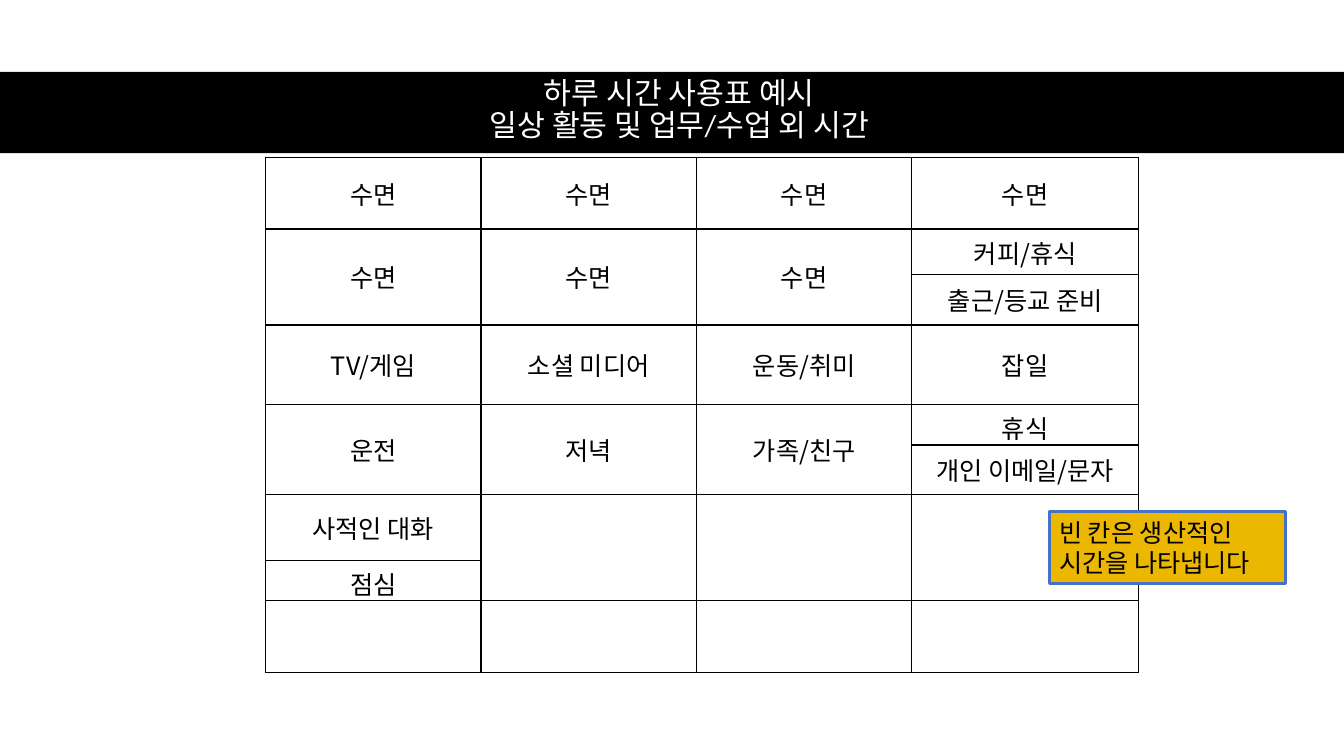
from lxml import etree
from pptx import Presentation
from pptx.dml.color import RGBColor
from pptx.enum.shapes import MSO_SHAPE
from pptx.enum.text import MSO_ANCHOR, MSO_AUTO_SIZE, PP_ALIGN
from pptx.oxml.ns import qn
from pptx.util import Cm, Pt

COLORS = {"black": "000000", "white": "FFFFFF", "gold": "EBB700", "blue": "4472C4"}
KOREAN = "Noto Sans CJK KR"


def add_run(p, text, size, color, font=KOREAN):
    r = p.add_run()
    r.text = text
    r.font.size = Pt(size)
    r.font.name = font
    r.font.color.rgb = RGBColor.from_string(COLORS[color])
    etree.SubElement(r.font._element, qn("a:ea"), typeface=KOREAN)


def add_box(s, left, top, width, height, fill):
    sp = s.shapes.add_shape(MSO_SHAPE.RECTANGLE, Cm(left), Cm(top), Cm(width), Cm(height))
    sp.shadow.inherit = False
    sp.fill.solid()
    sp.fill.fore_color.rgb = RGBColor.from_string(COLORS[fill])
    return sp


prs = Presentation()
prs.slide_width, prs.slide_height = Cm(33.87), Cm(19.05)
s = prs.slides.add_slide(prs.slide_layouts[6])

# Title band
band = add_box(s, 0, 1.81, 33.87, 2.05, "black")
band.line.fill.background()

# Title
title = s.shapes.add_textbox(Cm(1.55), Cm(1.77), Cm(31.14), Cm(2.05))
tf = title.text_frame
tf.word_wrap = True
tf.vertical_anchor = MSO_ANCHOR.MIDDLE
p = tf.paragraphs[0]
p.alignment = PP_ALIGN.CENTER
p.line_spacing = 0.9
add_run(p, "하루 시간 사용표 예시", 21.6, "white", "Calibri")
p.add_line_break()
add_run(p, "일상 활동 및 업무/수업 외 시간", 21.6, "white", "Calibri")

# Timetable: row height and cell texts
rows = [
    (1.81, ["수면", "수면", "수면", "수면"]),
    (1.15, ["수면", "수면", "수면", "커피/휴식"]),
    (1.27, ["", "", "", "출근/등교 준비"]),
    (2.01, ["TV/게임", "소셜 미디어", "운동/취미", "잡일"]),
    (0.94, ["운전", "저녁", "가족/친구", "휴식"]),
    (1.25, ["", "", "", "개인 이메일/문자"]),
    (1.65, ["사적인 대화", "", "", ""]),
    (0.94, ["점심", "", "", ""]),
    (1.81, ["", "", "", ""]),
]
col_widths = [5.43, 5.43, 5.43, 5.71]
frame = s.shapes.add_table(len(rows), len(col_widths), Cm(6.69), Cm(3.96),
                           Cm(sum(col_widths)), Cm(sum(h for h, _ in rows)))
table = frame.table
table.first_row = table.horz_banding = False
for column, width in zip(table.columns, col_widths):
    column.width = Cm(width)

for i, (height, texts) in enumerate(rows):
    table.rows[i].height = Cm(height)
    for j, text in enumerate(texts):
        cell = table.cell(i, j)
        cell.vertical_anchor = MSO_ANCHOR.MIDDLE
        tcPr = cell._tc.get_or_add_tcPr()
        for side in ("lnL", "lnR", "lnT", "lnB"):
            ln = etree.SubElement(tcPr, qn(f"a:{side}"), w=str(Pt(1)))
            fill = etree.SubElement(ln, qn("a:solidFill"))
            etree.SubElement(fill, qn("a:srgbClr"), val=COLORS["black"])
        cell.fill.background()
        p = cell.text_frame.paragraphs[0]
        p.alignment = PP_ALIGN.CENTER
        if text:
            add_run(p, text, 18, "black")

# Two-row cells: first row and the columns merged
for top, columns in ((1, (0, 1, 2)), (4, (0, 1, 2)), (6, (1, 2, 3))):
    for j in columns:
        table.cell(top, j).merge(table.cell(top + 1, j))

# Callout on the empty cells
note = add_box(s, 26.44, 12.9, 5.95, 1.8, "gold")
note.line.color.rgb = RGBColor.from_string(COLORS["blue"])
note.line.width = Pt(2.25)
tf = note.text_frame
tf.word_wrap = True
tf.auto_size = MSO_AUTO_SIZE.SHAPE_TO_FIT_TEXT
tf.vertical_anchor = MSO_ANCHOR.TOP
p = tf.paragraphs[0]
p.alignment = PP_ALIGN.LEFT
add_run(p, "빈 칸은 생산적인 시간을 나타냅니다", 18, "black")

prs.save("out.pptx")
